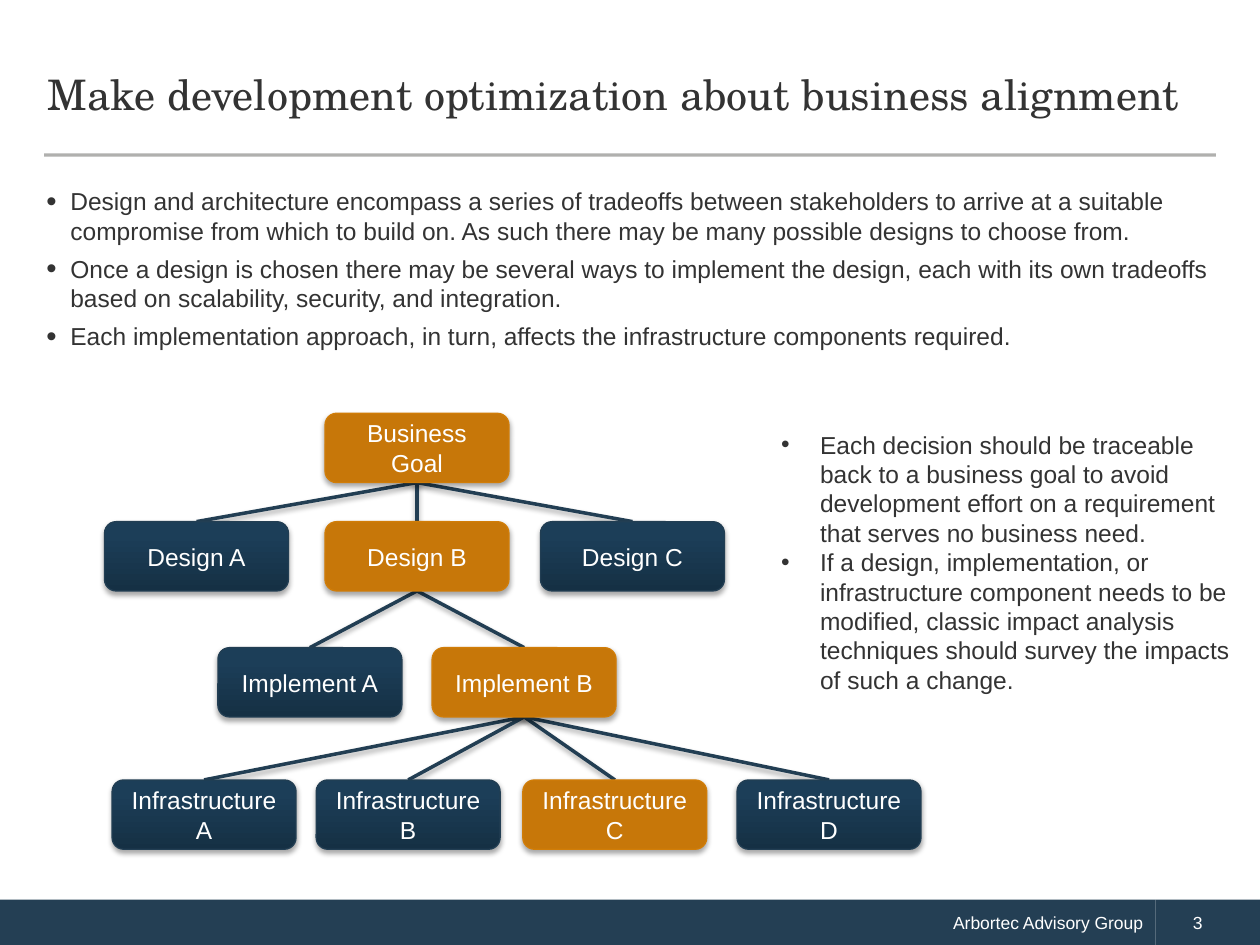
from dataclasses import dataclass

from lxml.etree import SubElement
from pptx import Presentation
from pptx.dml.color import RGBColor
from pptx.enum.shapes import MSO_CONNECTOR as Connector, MSO_SHAPE as Shape
from pptx.enum.text import MSO_ANCHOR as Anchor, PP_ALIGN as Align
from pptx.oxml.ns import qn
from pptx.util import Inches, Pt

NAVY, ORANGE, FOOTER = "223E53", "C77709", "243F54"
DARK, WHITE = "333333", "FFFFFF"
NODE_WIDTH, NODE_HEIGHT = 1.46, 0.55


@dataclass(frozen=True)
class Node:
    text: str
    left: float
    top: float
    parent: str = ""
    chosen: bool = False

    @property
    def center(self) -> float:
        return self.left + NODE_WIDTH / 2

    @property
    def bottom(self) -> float:
        return self.top + NODE_HEIGHT


NODES = [
    Node("Business Goal", 2.58, 3.28, chosen=True),
    Node("Design A", 0.83, 4.14, "Business Goal"),
    Node("Design B", 2.58, 4.14, "Business Goal", True),
    Node("Design C", 4.29, 4.14, "Business Goal"),
    Node("Implement A", 1.73, 5.14, "Design B"),
    Node("Implement B", 3.43, 5.14, "Design B", True),
    Node("Infrastructure A", 0.89, 6.19, "Implement B"),
    Node("Infrastructure B", 2.51, 6.19, "Implement B"),
    Node("Infrastructure C", 4.15, 6.19, "Implement B", True),
    Node("Infrastructure D", 5.85, 6.19, "Implement B"),
]

INTRO = [
    "Design and architecture encompass a series of tradeoffs between stakeholders to arrive "
    "at a suitable compromise from which to build on. As such there may be many possible "
    "designs to choose from.",
    "Once a design is chosen there may be several ways to implement the design, each with "
    "its own tradeoffs based on scalability, security, and integration.",
    "Each implementation approach, in turn, affects the infrastructure components required.",
]
ADVICE = [
    "Each decision should be traceable back to a business goal to avoid development effort "
    "on a requirement that serves no business need.",
    "If a design, implementation, or infrastructure component needs to be modified, classic "
    "impact analysis techniques should survey the impacts of such a change.",
]


def color(value: str) -> RGBColor:
    return RGBColor.from_string(value)


def write(shape, lines: list[str], size: float, ink: str, font: str = "Arial",
          align=Align.LEFT, anchor=Anchor.MIDDLE) -> None:
    frame = shape.text_frame
    frame.word_wrap = True
    frame.vertical_anchor = anchor
    frame.text = "\n".join(lines)
    for para in frame.paragraphs:
        para.alignment = align
        for span in para.runs:
            span.font.size = Pt(size)
            span.font.name = font
            span.font.color.rgb = color(ink)


def indent(para, margin: float, first: float = 0):
    props = para._p.get_or_add_pPr()
    props.set("marL", str(Inches(margin)))
    props.set("indent", str(Inches(first)))
    return props


def add_text(slide, left: float, top: float, width: float, height: float):
    return slide.shapes.add_textbox(Inches(left), Inches(top), Inches(width), Inches(height))


def add_bullets(box, lines: list[str], hang: float, before: float = 0,
                bullet_size: int = 100) -> None:
    write(box, lines, 14, DARK, anchor=Anchor.TOP)
    for para in box.text_frame.paragraphs:
        para.space_before = Pt(before)
        props = indent(para, hang, -hang)
        tint = SubElement(props, qn("a:buClr"))
        SubElement(tint, qn("a:srgbClr"), val=DARK)
        SubElement(props, qn("a:buSzPct"), val=str(bullet_size * 1000))
        SubElement(props, qn("a:buFont"), typeface="Arial")
        SubElement(props, qn("a:buChar"), char="•")


def add_shadow(shape) -> None:
    effects = SubElement(shape._element.spPr, qn("a:effectLst"))
    shadow = SubElement(effects, qn("a:outerShdw"), blurRad=str(Pt(3.1)), dist=str(Pt(1.8)),
                        dir="5400000", rotWithShape="0")
    black = SubElement(shadow, qn("a:srgbClr"), val="000000")
    SubElement(black, qn("a:alpha"), val="35000")


def add_line(slide, start: tuple[float, float], end: tuple[float, float],
             ink: str, width: float):
    line = slide.shapes.add_connector(Connector.STRAIGHT, *map(Inches, start + end))
    line.line.color.rgb = color(ink)
    line.line.width = Pt(width)
    return line


def add_node(slide, node: Node) -> None:
    shape = slide.shapes.add_shape(Shape.ROUNDED_RECTANGLE, Inches(node.left),
                                   Inches(node.top), Inches(NODE_WIDTH), Inches(NODE_HEIGHT))
    if node.chosen:
        shape.fill.solid()
        shape.fill.fore_color.rgb = color(ORANGE)
    else:
        shape.fill.gradient()
        shape.fill.gradient_angle = 90
        stops = zip(shape.fill.gradient_stops, ("153044", "1C3E58"), (0, 0.8))
        for stop, tint, position in stops:
            stop.color.rgb = color(tint)
            stop.position = position
    shape.line.color.rgb = color("D17D08" if node.chosen else NAVY)
    shape.line.width = Pt(0.75)
    add_shadow(shape)
    write(shape, [node.text], 14, WHITE, align=Align.CENTER)


def add_footer(slide, left: float, width: float, text: str, margin: float, align) -> None:
    bar = slide.shapes.add_shape(Shape.RECTANGLE, Inches(left), Inches(7.14),
                                 Inches(width), Inches(0.37))
    bar.shadow.inherit = False
    bar.fill.solid()
    bar.fill.fore_color.rgb = color(FOOTER)
    bar.line.fill.background()
    write(bar, [text], 10, WHITE, align=align)
    indent(bar.text_frame.paragraphs[0], margin)


def main() -> None:
    deck = Presentation()
    deck.slide_width, deck.slide_height = Inches(10), Inches(7.5)
    page = deck.slides.add_slide(deck.slide_layouts[6])

    # Footer
    add_footer(page, 0, 9.17, "Arbortec Advisory Group", 0.29, Align.RIGHT)
    add_footer(page, 9.17, 0.83, "3", 0.2, Align.LEFT)

    # Title and rule
    rule = add_line(page, (0.35, 1.23), (9.65, 1.23), "45433E", 1.75)
    SubElement(rule._element.spPr, qn("a:effectLst"))
    tint = next(rule._element.spPr.iter(qn("a:srgbClr")))
    SubElement(tint, qn("a:alpha"), val="42000")
    title = add_text(page, 0.28, 0.29, 9.43, 0.94)
    write(title, ["Make development optimization about business alignment"], 24, DARK,
          "TeX Gyre Schola")
    title.text_frame.paragraphs[0].line_spacing = Pt(26)

    # Bullet lists
    add_bullets(add_text(page, 0.27, 1.43, 9.44, 1.46), INTRO, 0.19, 5, 120)
    add_bullets(add_text(page, 6.1, 3.36, 3.79, 2.22), ADVICE, 0.31)

    # Decision tree: branches first, so that the boxes lie over them
    by_name = {node.text: node for node in NODES}
    for node in NODES:
        if node.parent:
            parent = by_name[node.parent]
            add_shadow(add_line(page, (parent.center, parent.bottom),
                                (node.center, node.top), NAVY, 2))
    for node in NODES:
        add_node(page, node)

    deck.save("out.pptx")


if __name__ == "__main__":
    main()
